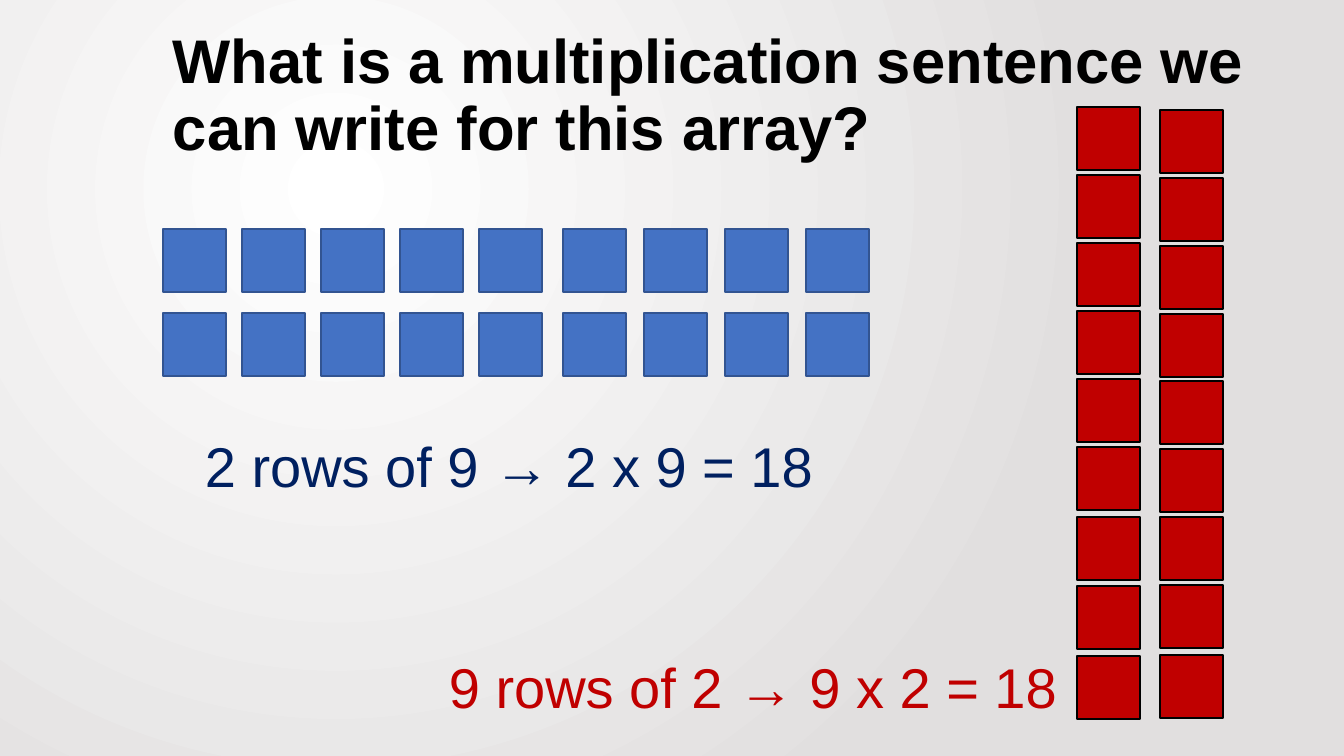
from lxml import etree
from pptx import Presentation
from pptx.dml.color import RGBColor as Rgb
from pptx.enum.shapes import MSO_SHAPE as Shape
from pptx.enum.text import MSO_ANCHOR as Anchor
from pptx.util import Emu, Pt

# Content: lengths in px
COLORS = {
    "black": "000000", "navy": "002060", "red": "C00000",
    "blue": "4472C4", "blue edge": "325491",
    "glow": "FFFFFF", "backdrop": "E1DFDF",
}
TEXTS = [
    # words, (left, top, width, height), colour, font, paragraph format
    ("What is a multiplication sentence we can write for this array?",
     (163, 0, 1105, 194), "black", {"size": Pt(44), "bold": True},
     {"line_spacing": 0.9}),
    ("2 rows of 9 → 2 x 9 = 18", (195, 419, 783, 93), "navy",
     {"size": Pt(40)}, {"space_before": Pt(8), "space_after": Pt(6)}),
    ("9 rows of 2 → 9 x 2 = 18", (439, 640, 638, 93), "red",
     {"size": Pt(40)}, {"space_before": Pt(8), "space_after": Pt(6)}),
]
SIDE = 63
BLUE_GROUPS = [(163, 79, 5), (563, 81, 4)]  # first left, step, count
BLUE_TOPS = [229, 313]
RED_COLUMNS = {
    1077: [107, 175, 243, 311, 379, 447, 517, 586, 656],
    1160: [110, 178, 246, 314, 381, 449, 517, 585, 655],
}

PX = 914400 / 100.8
A = "http://schemas.openxmlformats.org/drawingml/2006/main"


def px(length):
    return Emu(round(length * PX))


def color(name):
    return Rgb.from_string(COLORS[name])


def apply(target, values):
    for name, value in values.items():
        setattr(target, name, value)


def add_square(page, left, top, fill, edge):
    square = page.shapes.add_shape(
        Shape.RECTANGLE, px(left), px(top), px(SIDE), px(SIDE))
    square.shadow.inherit = False
    square.fill.solid()
    square.fill.fore_color.rgb = color(fill)
    square.line.color.rgb = color(edge)
    square.line.width = Pt(1)


def add_text(page, words, place, ink, font, spacing):
    box = page.shapes.add_textbox(*map(px, place))
    apply(box.text_frame, {"word_wrap": True, "vertical_anchor": Anchor.MIDDLE})
    para = box.text_frame.paragraphs[0]
    apply(para, spacing)
    span = para.add_run()
    span.text = words
    apply(span.font, {"name": "Arial", **font})
    span.font.color.rgb = color(ink)


def paint_background(page):
    fill = page.background.fill
    fill.gradient()
    for stop, name in zip(fill.gradient_stops, ("glow", "backdrop")):
        stop.color.rgb = color(name)
    # Circular gradient centred a quarter of the way in
    gradient = page.element.find(f".//{{{A}}}gradFill")
    gradient.replace(gradient.find(f"{{{A}}}lin"), etree.fromstring(
        f'<a:path xmlns:a="{A}" path="circle">'
        '<a:fillToRect l="50000" t="50000" r="100000" b="100000"/></a:path>'))


def main():
    deck = Presentation()
    apply(deck, {"slide_width": px(1344), "slide_height": px(756)})
    page = deck.slides.add_slide(deck.slide_layouts[6])
    paint_background(page)

    # Two rows of nine
    for top in BLUE_TOPS:
        for first, step, count in BLUE_GROUPS:
            for i in range(count):
                add_square(page, first + i * step, top, "blue", "blue edge")

    # Nine rows of two
    for left, tops in RED_COLUMNS.items():
        for top in tops:
            add_square(page, left, top, "red", "black")

    # Question and answers
    for text in TEXTS:
        add_text(page, *text)

    deck.save("out.pptx")


if __name__ == "__main__":
    main()
